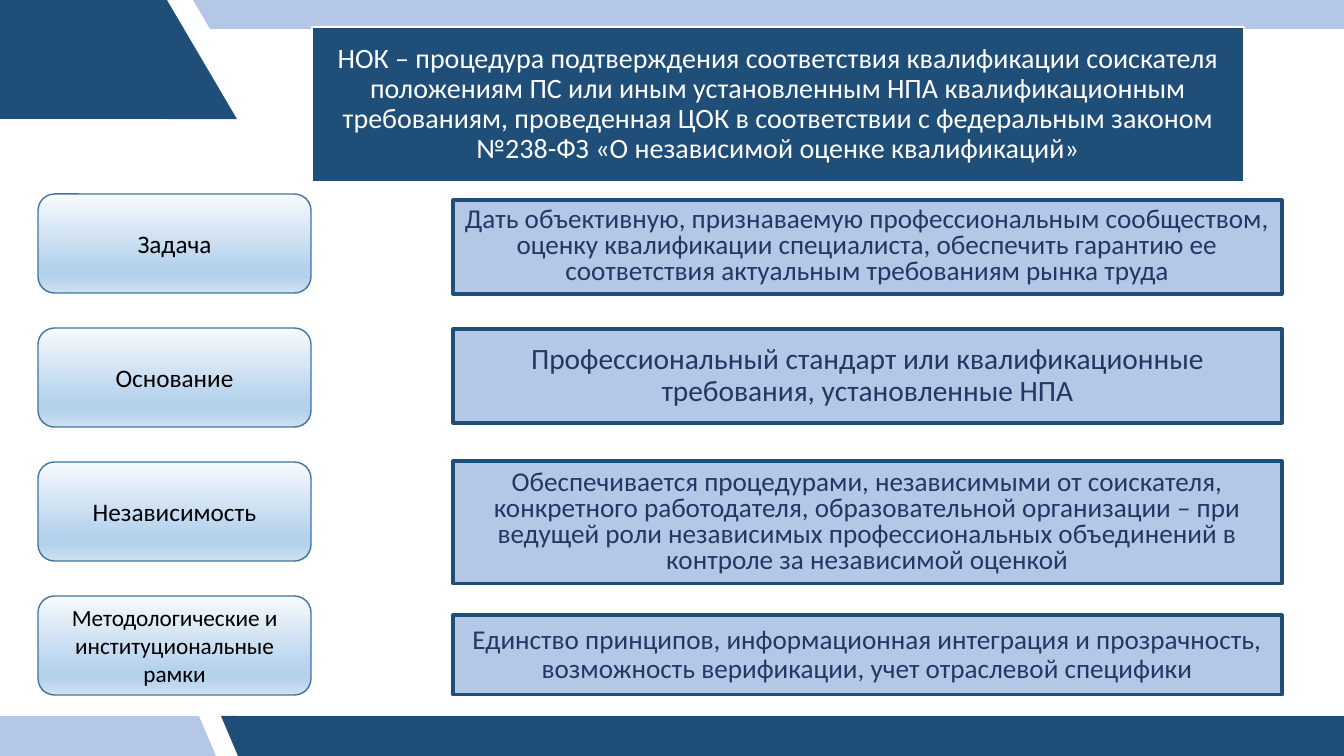
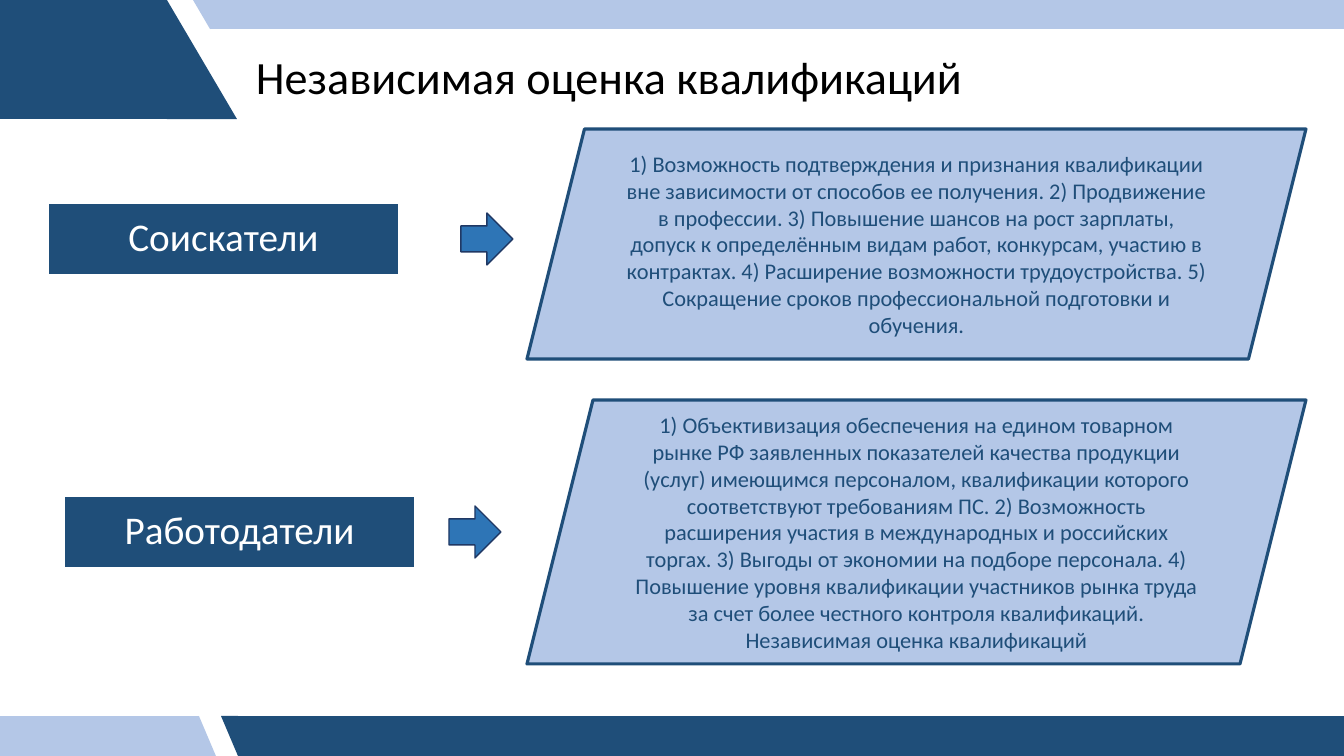
from dataclasses import dataclass

from lxml import etree
from pptx import Presentation
from pptx.dml.color import RGBColor
from pptx.enum.shapes import MSO_SHAPE
from pptx.enum.text import MSO_ANCHOR, PP_ALIGN
from pptx.oxml.ns import qn
from pptx.util import Emu, Pt

RECTANGLE = MSO_SHAPE.RECTANGLE
ROUNDED = MSO_SHAPE.ROUNDED_RECTANGLE
TRIANGLE = MSO_SHAPE.RIGHT_TRIANGLE
PROCESS = MSO_SHAPE.FLOWCHART_PROCESS
PARALLELOGRAM = MSO_SHAPE.PARALLELOGRAM
ARROW = MSO_SHAPE.RIGHT_ARROW
LEFT, CENTER = PP_ALIGN.LEFT, PP_ALIGN.CENTER
MIDDLE = MSO_ANCHOR.MIDDLE

EMU_PER_PX = 914400 / 100.8
SLIDE_WIDTH, SLIDE_HEIGHT = 1344, 756


@dataclass(frozen=True)
class Theme:
    font: str = "Calibri"
    dark: str = "1F4E79"
    light: str = "B4C7E7"
    navy: str = "203864"
    arrow: str = "2E75B6"
    label_line: str = "43739E"
    white: str = "FFFFFF"
    black: str = "000000"
    label_gradient: tuple = ((0, "F7FAFD"), (74, "B5D2EC"), (83, "B5D2EC"), (100, "CEE1F2"))
    title_size: float = 33
    caption_size: float = 28
    definition_size: float = 20
    label_size: float = 18
    benefit_size: float = 16
    thin: float = 1
    thick: float = 2.25


THEME = Theme()

# shape, colour, (left, top, width, height), rotation
BANDS = [
    (PROCESS, THEME.dark, (238, 716, 1106, 40), 180),
    (TRIANGLE, THEME.dark, (221, 716, 17, 40), 180),
    (PROCESS, THEME.light, (0, 716, 199, 40), 0),
    (TRIANGLE, THEME.light, (199, 716, 17, 40), 0),
    (PROCESS, THEME.light, (210, 0, 1134, 29), 180),
    (TRIANGLE, THEME.light, (193, 0, 17, 29), 180),
    (PROCESS, THEME.dark, (0, 0, 167, 119), 0),
    (TRIANGLE, THEME.dark, (167, 0, 70, 119), 0),
]

DEFINITION = (
    "НОК – процедура подтверждения соответствия квалификации соискателя положениям ПС "
    "или иным установленным НПА квалификационным требованиям, проведенная ЦОК в соответствии "
    "с федеральным законом №238-ФЗ «О независимой оценке квалификаций»"
)

PRINCIPLES = [
    dict(label="Задача", label_size=THEME.label_size, top=200, height=94, size=19.4, spacing=0.8,
         text="Дать объективную, признаваемую профессиональным сообществом, оценку квалификации "
              "специалиста, обеспечить гарантию ее соответствия актуальным требованиям рынка труда"),
    dict(label="Основание", label_size=THEME.label_size, top=329, height=94, size=21, spacing=0.9,
         text="Профессиональный стандарт или квалификационные требования, установленные НПА"),
    dict(label="Независимость", label_size=THEME.label_size, top=461, height=123, size=19.4, spacing=0.8,
         text="Обеспечивается процедурами, независимыми от соискателя, конкретного работодателя, "
              "образовательной организации – при ведущей роли независимых профессиональных "
              "объединений в контроле за независимой оценкой"),
    dict(label="Методологические и институциональные рамки", label_size=16.6,
         top=615, height=80, size=19.4, spacing=0.9,
         text="Единство принципов, информационная интеграция и прозрачность, возможность "
              "верификации, учет отраслевой специфики"),
]
LABEL_TOP, LABEL_STEP = 194, 134

TITLE = "Независимая оценка квалификаций"

BENEFITS = [
    dict(caption="Соискатели", caption_at=(48, 203), arrow_at=(461, 213), top=129, height=230,
         paragraphs=[
             "1) Возможность подтверждения и признания квалификации вне зависимости от способов ее "
             "получения. 2) Продвижение в профессии. 3) Повышение шансов на рост зарплаты, допуск к "
             "определённым видам работ, конкурсам, участию в контрактах. 4) Расширение возможности "
             "трудоустройства. 5) Сокращение сроков профессиональной подготовки и обучения."]),
    dict(caption="Работодатели", caption_at=(64, 496), arrow_at=(449, 506), top=400, height=264,
         paragraphs=[
             "1) Объективизация обеспечения на едином товарном рынке РФ заявленных показателей "
             "качества продукции (услуг) имеющимся персоналом, квалификации которого соответствуют "
             "требованиям ПС. 2) Возможность расширения участия в международных и российских торгах. "
             "3) Выгоды от экономии на подборе персонала. 4) Повышение уровня квалификации участников "
             "рынка труда за счет более честного контроля квалификаций.",
             "Независимая оценка квалификаций"]),
]


def px(value):
    return Emu(round(value * EMU_PER_PX))


def add_shape(slide, kind, box, fill=None, line=None, line_width=THEME.thin, rotation=0):
    shape = slide.shapes.add_shape(kind, *map(px, box))
    shape.shadow.inherit = False
    shape.rotation = rotation
    if fill:
        shape.fill.solid()
        shape.fill.fore_color.rgb = RGBColor.from_string(fill)
    if line:
        shape.line.color.rgb = RGBColor.from_string(line)
        shape.line.width = Pt(line_width)
    else:
        shape.line.fill.background()
    return shape


def set_gradient(shape, stops):
    """Fill the shape from top to bottom with (percent, colour) stops."""
    shape.fill.gradient()
    shape.fill.gradient_angle = 270
    stop_list = shape.element.spPr.find(".//" + qn("a:gsLst"))
    for stop in list(stop_list):
        stop_list.remove(stop)
    for percent, color in stops:
        stop = etree.SubElement(stop_list, qn("a:gs"), pos=str(percent * 1000))
        etree.SubElement(stop, qn("a:srgbClr"), val=color)


def set_text(shape, *paragraphs, size, color, align=CENTER, spacing=None, inset=None):
    frame = shape.text_frame
    frame.word_wrap = True
    frame.vertical_anchor = MIDDLE
    if inset is not None:
        frame.margin_left = frame.margin_right = px(inset)
        frame.margin_top = frame.margin_bottom = px(inset)
    for index, text in enumerate(paragraphs):
        paragraph = frame.add_paragraph() if index else frame.paragraphs[0]
        paragraph.alignment = align
        if spacing:
            paragraph.line_spacing = spacing
        run = paragraph.add_run()
        run.text = text
        run.font.name = THEME.font
        run.font.size = Pt(size)
        run.font.color.rgb = RGBColor.from_string(color)


def add_dark_box(slide, box, text, size):
    shape = add_shape(slide, RECTANGLE, box, THEME.dark, THEME.white)
    set_text(shape, text, size=size, color=THEME.white, spacing=0.9, inset=6)


def add_light_box(slide, kind, box, *paragraphs, **text_format):
    shape = add_shape(slide, kind, box, THEME.light, THEME.dark, THEME.thick)
    set_text(shape, *paragraphs, **text_format)


def add_banded_slide(presentation):
    slide = presentation.slides.add_slide(presentation.slide_layouts[6])
    for kind, color, box, rotation in BANDS:
        add_shape(slide, kind, box, color, rotation=rotation)
    return slide


def build_principles(presentation):
    slide = add_banded_slide(presentation)
    add_dark_box(slide, (312, 27, 932, 155), DEFINITION, THEME.definition_size)
    for index, row in enumerate(PRINCIPLES):
        label_box = (38, LABEL_TOP + index * LABEL_STEP, 273, 99)
        label = add_shape(slide, ROUNDED, label_box, line=THEME.label_line)
        set_gradient(label, THEME.label_gradient)
        set_text(label, row["label"], size=row["label_size"], color=THEME.black)
        add_light_box(slide, RECTANGLE, (453, row["top"], 829, row["height"]), row["text"],
                      size=row["size"], color=THEME.navy, spacing=row["spacing"])


def build_benefits(presentation):
    slide = add_banded_slide(presentation)
    title = slide.shapes.add_textbox(*map(px, (246, 31, 1009, 98)))
    set_text(title, TITLE, size=THEME.title_size, color=THEME.black, align=LEFT, spacing=0.9)
    for row in BENEFITS:
        add_light_box(slide, PARALLELOGRAM, (527, row["top"], 779, row["height"]),
                      *row["paragraphs"], size=THEME.benefit_size, color=THEME.dark)
        add_shape(slide, ARROW, (*row["arrow_at"], 52, 52), THEME.arrow, THEME.navy)
        add_dark_box(slide, (*row["caption_at"], 351, 72), row["caption"], THEME.caption_size)


def main():
    presentation = Presentation()
    presentation.slide_width = px(SLIDE_WIDTH)
    presentation.slide_height = px(SLIDE_HEIGHT)
    build_principles(presentation)
    build_benefits(presentation)
    presentation.save("out.pptx")


if __name__ == "__main__":
    main()
